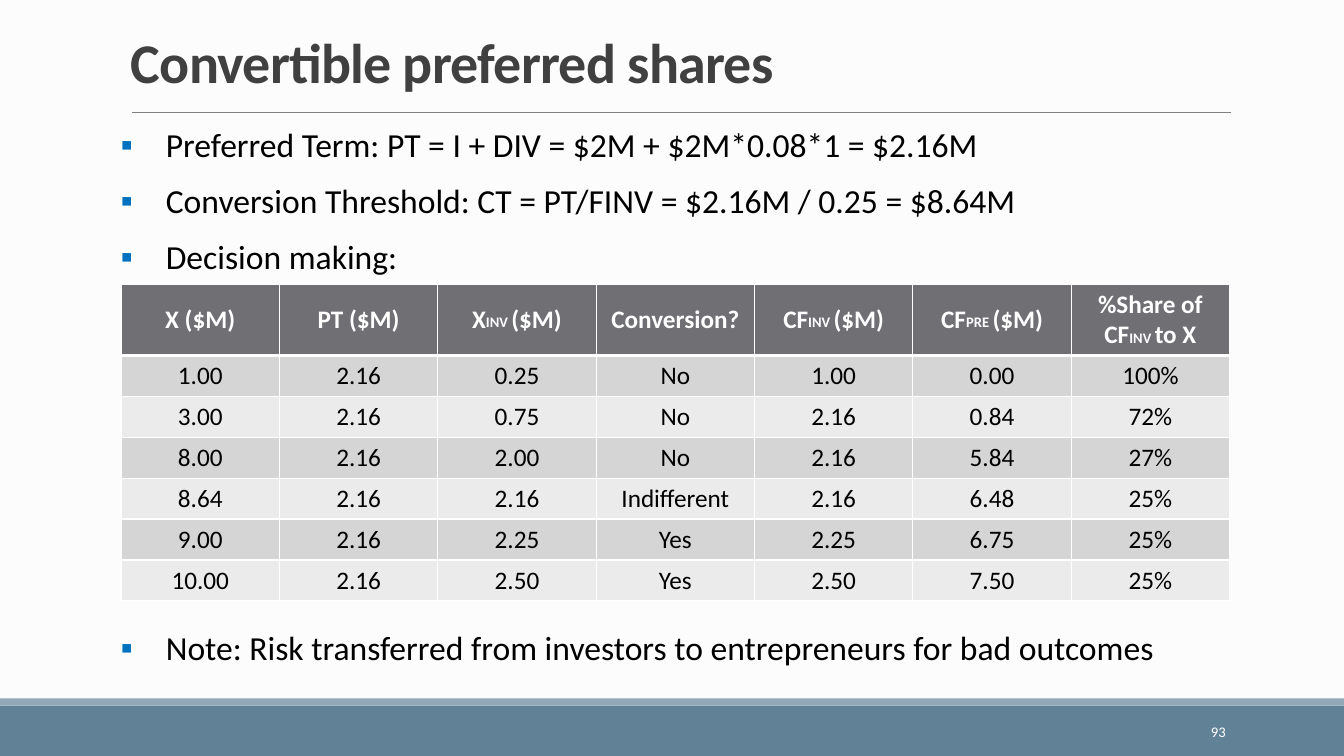
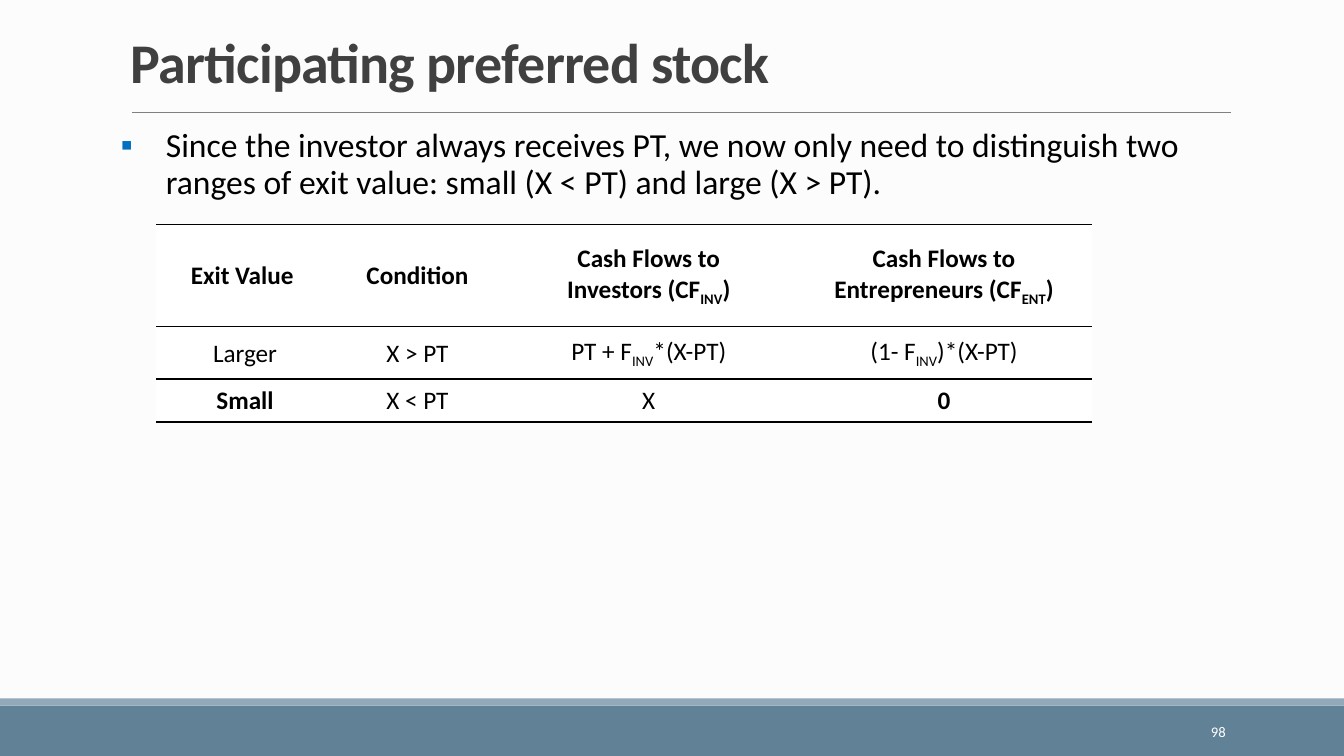
from lxml import etree
from pptx import Presentation
from pptx.dml.color import RGBColor
from pptx.enum.shapes import MSO_CONNECTOR, MSO_SHAPE
from pptx.enum.text import MSO_ANCHOR, PP_ALIGN
from pptx.oxml.ns import qn
from pptx.util import Cm, Pt

RECT, STRAIGHT = MSO_SHAPE.RECTANGLE, MSO_CONNECTOR.STRAIGHT
TOP, MIDDLE = MSO_ANCHOR.TOP, MSO_ANCHOR.MIDDLE
LEFT, CENTER, RIGHT = PP_ALIGN.LEFT, PP_ALIGN.CENTER, PP_ALIGN.RIGHT

# Shared look; lengths are centimetres
FONT = "Calibri"
SLIDE_W, SLIDE_H = 33.87, 19.05
MARGIN, CONTENT_W = 3.05, 27.94
BODY_TOP = 3.12
INDENT = 1.13
BLACK, WHITE = "000000", "FFFFFF"
PAPER, TITLE_GREY, RULE_GREY = "FCFCFC", "404040", "808080"
FOOTER, FOOTER_EDGE, BULLET = "618197", "92A9B9", "0070C0"
HEADER_FILL, ROW_FILLS = "6F6F74", ("D5D5D6", "EBEBEB")


def color(hex_text):
    return RGBColor.from_string(hex_text)


def style_run(run, size, hex_text, bold=False):
    run.font.name = FONT
    run.font.size = Pt(size)
    run.font.bold = bold
    run.font.color.rgb = color(hex_text)


def add_text(slide, box, lines, size, hex_text, bold=False, align=LEFT, anchor=TOP):
    frame = slide.shapes.add_textbox(*map(Cm, box)).text_frame
    frame.word_wrap = True
    frame.vertical_anchor = anchor
    frame.text = "\n".join(lines)
    for paragraph in frame.paragraphs:
        paragraph.alignment = align
        for run in paragraph.runs:
            style_run(run, size, hex_text, bold)
    return frame


# Title, rule, footer bands and page number
def add_band(slide, box, hex_text):
    band = slide.shapes.add_shape(RECT, *map(Cm, box))
    band.shadow.inherit = False
    band.fill.solid()
    band.fill.fore_color.rgb = color(hex_text)
    band.line.fill.background()


def add_frame(prs, title, page):
    slide = prs.slides.add_slide(prs.slide_layouts[6])
    slide.background.fill.solid()
    slide.background.fill.fore_color.rgb = color(PAPER)
    add_band(slide, (0, 17.78, SLIDE_W, 1.27), FOOTER)
    add_band(slide, (0, 17.6, SLIDE_W, 0.18), FOOTER_EDGE)

    rule = slide.shapes.add_connector(STRAIGHT, Cm(3.33), Cm(2.84), Cm(31.01), Cm(2.84))
    rule.line.color.rgb = color(RULE_GREY)
    rule.line.width = Pt(0.5)
    etree.SubElement(rule._element.spPr, qn("a:effectLst"))

    heading = add_text(slide, (MARGIN, 0.79, CONTENT_W, 1.78), [title], 40,
                       TITLE_GREY, bold=True, anchor=MIDDLE).paragraphs[0]
    heading.line_spacing = 0.85
    heading.runs[0].font._element.set("spc", "-50")
    add_text(slide, (27.51, 17.93, 3.63, 1.02), [str(page)], 10.5, WHITE,
             align=RIGHT, anchor=MIDDLE)
    return slide


# Bulleted body text
def add_bullets(slide, box, lines):
    frame = add_text(slide, box, lines, 24, BLACK)
    frame.margin_left = frame.margin_right = 0
    for index, paragraph in enumerate(frame.paragraphs):
        paragraph.line_spacing = 0.9
        paragraph.space_before = Pt(12 if index else 0)
        paragraph.space_after = Pt(2)
        props = paragraph._p.get_or_add_pPr()
        props.set("marL", str(Cm(INDENT)))
        props.set("indent", str(-Cm(INDENT)))
        bullet_color = etree.SubElement(props, qn("a:buClr"))
        etree.SubElement(bullet_color, qn("a:srgbClr"), val=BULLET)
        etree.SubElement(props, qn("a:buFont"), typeface=FONT)
        etree.SubElement(props, qn("a:buChar"), char="▪")


# Tables: in cell text, the parts between bars are lowered
def fill_cell(cell, text, fill, hex_text, bold, baseline, borders, anchor):
    props = cell._tc.get_or_add_tcPr()
    for side, (width, line_color) in zip("LRTB", borders):
        line = etree.SubElement(props, qn(f"a:ln{side}"), w=str(Pt(width)))
        if width:
            solid = etree.SubElement(line, qn("a:solidFill"))
            etree.SubElement(solid, qn("a:srgbClr"), val=line_color)
        else:
            etree.SubElement(line, qn("a:noFill"))
    cell.fill.solid()
    cell.fill.fore_color.rgb = color(fill)
    cell.vertical_anchor = anchor
    frame = cell.text_frame
    for index, row_text in enumerate(text.split("\n")):
        paragraph = frame.add_paragraph() if index else frame.paragraphs[0]
        paragraph.alignment = CENTER
        for part, piece in enumerate(row_text.split("|")):
            run = paragraph.add_run()
            run.text = piece
            style_run(run, 18, hex_text, bold)
            if part % 2:
                run.font._element.set("baseline", str(baseline))


def add_grid(slide, left, top, widths, heights):
    table = slide.shapes.add_table(len(heights), len(widths), Cm(left), Cm(top),
                                   Cm(sum(widths)), Cm(sum(heights))).table
    for column, width in zip(table.columns, widths):
        column.width = Cm(width)
    for row, height in zip(table.rows, heights):
        row.height = Cm(height)
    return table


def add_decision_table(slide, left, top, width, rows):
    count = len(rows[0])
    table = add_grid(slide, left, top, [width / count] * count,
                     [1.8] + [1.03] * (len(rows) - 1))
    for r, row in enumerate(rows):
        header = r == 0
        upper, lower = (3 if r == 1 else 1), (3 if header else 1)
        borders = [(w, WHITE) for w in (1, 1, upper, lower)]
        fill = HEADER_FILL if header else ROW_FILLS[(r - 1) % 2]
        for c, text in enumerate(row):
            fill_cell(table.cell(r, c), text, fill, WHITE if header else BLACK,
                      header, 3000, borders, MIDDLE if header else TOP)


def add_cash_flow_table(slide, left, top, widths, heights, rows, bold_cells):
    table = add_grid(slide, left, top, widths, heights)
    for r, row in enumerate(rows):
        lower = 2 if r == len(rows) - 1 else 1
        borders = [(w, BLACK) for w in (0, 0, 1, lower)]
        for c, text in enumerate(row):
            cell = table.cell(r, c)
            cell.margin_left = cell.margin_right = cell.margin_top = Cm(0.03)
            cell.margin_bottom = 0
            fill_cell(cell, text, WHITE, BLACK, r == 0 or (r, c) in bold_cells,
                      -25000, borders, MIDDLE)


def build_convertible(prs):
    slide = add_frame(prs, "Convertible preferred shares", 93)
    add_bullets(slide, (MARGIN, BODY_TOP, CONTENT_W, 4), [
        "Preferred Term: PT = I + DIV = $2M + $2M*0.08*1 = $2.16M",
        "Conversion Threshold: CT = PT/FINV = $2.16M / 0.25 = $8.64M",
        "Decision making:",
    ])
    add_decision_table(slide, MARGIN, 7.16, CONTENT_W, [
        ("X ($M)", "PT ($M)", "X|INV |($M)", "Conversion?", "CF|INV |($M)",
         "CF|PRE |($M)", "%Share of CF|INV |to X"),
        ("1.00", "2.16", "0.25", "No", "1.00", "0.00", "100%"),
        ("3.00", "2.16", "0.75", "No", "2.16", "0.84", "72%"),
        ("8.00", "2.16", "2.00", "No", "2.16", "5.84", "27%"),
        ("8.64", "2.16", "2.16", "Indifferent", "2.16", "6.48", "25%"),
        ("9.00", "2.16", "2.25", "Yes", "2.25", "6.75", "25%"),
        ("10.00", "2.16", "2.50", "Yes", "2.50", "7.50", "25%"),
    ])
    add_bullets(slide, (MARGIN, 15.8, CONTENT_W, 1.3), [
        "Note: Risk transferred from investors to entrepreneurs for bad outcomes",
    ])


def build_participating(prs):
    slide = add_frame(prs, "Participating preferred stock", 98)
    add_bullets(slide, (MARGIN, BODY_TOP, CONTENT_W, 2.2), [
        "Since the investor always receives PT, we now only need to distinguish two "
        "ranges of exit value: small (X < PT) and large (X > PT).",
    ])
    add_cash_flow_table(slide, 3.94, 5.66, (4.47, 4.22, 7.44, 7.44), (2.57, 1.32, 1.09), [
        ("Exit Value ", "Condition", "Cash Flows to\nInvestors (CF|INV|)",
         "Cash Flows to\nEntrepreneurs (CF|ENT|)"),
        ("Larger", "X > PT", "PT + F|INV|*(X-PT)", "(1- F|INV|)*(X-PT)"),
        ("Small", "X < PT", "X", "0"),
    ], bold_cells={(2, 0), (2, 3)})


def main():
    prs = Presentation()
    prs.slide_width, prs.slide_height = Cm(SLIDE_W), Cm(SLIDE_H)
    build_convertible(prs)
    build_participating(prs)
    prs.save("out.pptx")


if __name__ == "__main__":
    main()
